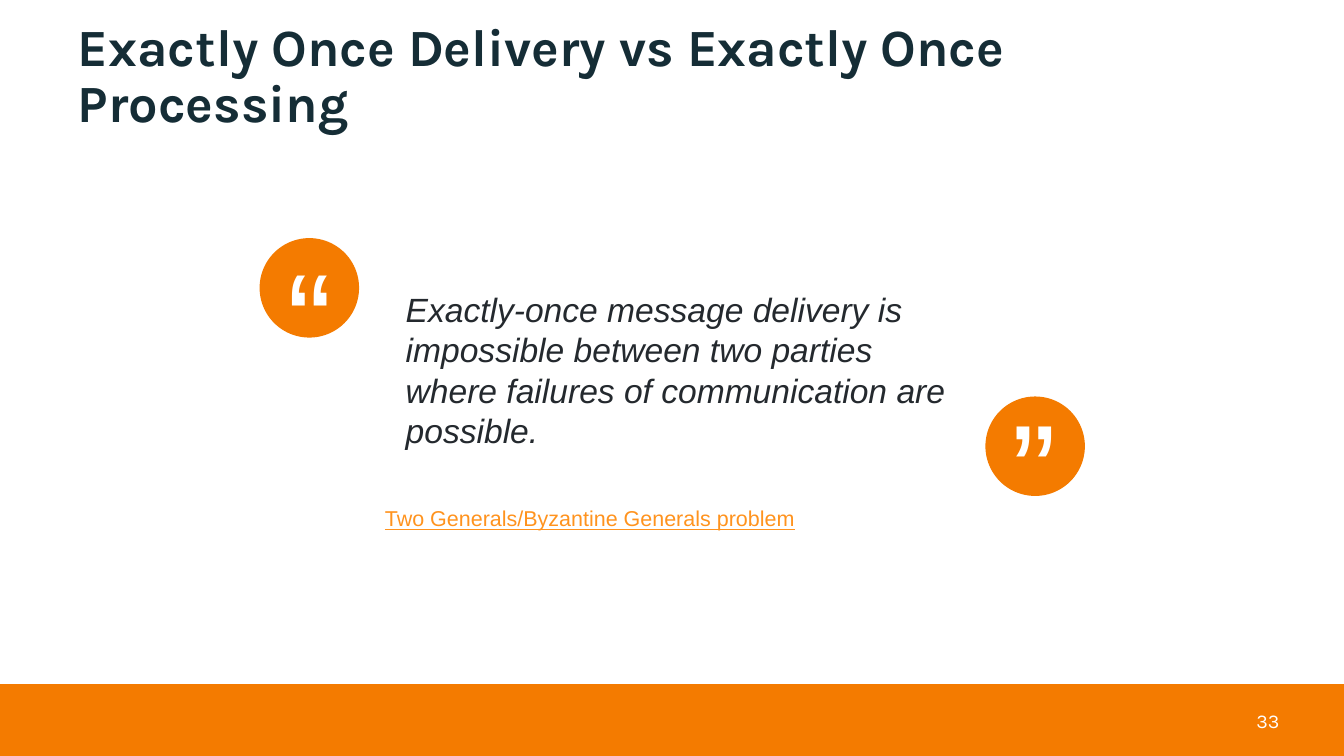
from pptx import Presentation
from pptx.dml.color import RGBColor
from pptx.enum.shapes import MSO_SHAPE
from pptx.enum.text import MSO_ANCHOR, MSO_AUTO_SIZE, PP_ALIGN
from pptx.util import Inches, Pt

COLUMNS, ROWS = 100, 56.25
CELL = Inches(0.1)
ORANGE, WHITE = "F47B00", "FFFFFF"


def color(value):
    return RGBColor.from_string(value)


def grid(*lengths):
    return [round(length * CELL) for length in lengths]


def write(box, text, size, ink, font="Arial", bold=False, italic=False,
          underline=False, align=PP_ALIGN.LEFT, anchor=MSO_ANCHOR.TOP,
          spacing=None, inset=1):
    frame = box.text_frame
    frame.word_wrap = True
    frame.auto_size = MSO_AUTO_SIZE.NONE
    frame.vertical_anchor = anchor
    frame.margin_left, frame.margin_right = grid(inset, inset)
    frame.margin_top, frame.margin_bottom = grid(inset, inset)
    para = frame.paragraphs[0]
    para.alignment = align
    para.line_spacing = spacing
    span = para.add_run()
    span.text = text
    span.font.name, span.font.size = font, Pt(size)
    span.font.bold, span.font.italic, span.font.underline = bold, italic, underline
    span.font.color.rgb = color(ink)


class SlideBuilder:
    """Places elements on a slide, measured in grid columns and rows."""

    def __init__(self, page):
        self.page = page

    def title(self, text, area, **style):
        box = self.page.shapes.title
        box.left, box.top, box.width, box.height = grid(*area)
        write(box, text, **style)

    def shape(self, kind, area, fill, parent=None):
        shape = (parent or self.page).shapes.add_shape(kind, *grid(*area))
        shape.shadow.inherit = False
        shape.fill.solid()
        shape.fill.fore_color.rgb = color(fill)
        shape.line.fill.background()
        return shape

    def text(self, text, area, parent=None, **style):
        box = (parent or self.page).shapes.add_textbox(*grid(*area))
        write(box, text, **style)
        return box

    def quote_badge(self, circle_at, mark_at, rotation=0):
        group = self.page.shapes.add_group_shape()
        circle = self.shape(MSO_SHAPE.OVAL, (*circle_at, 7.4, 7.4), ORANGE, group)
        mark = self.text("“", (*mark_at, 4.7, 9.5), group, size=72, ink=WHITE)
        circle.rotation = mark.rotation = rotation


def main():
    deck = Presentation()
    deck.slide_width, deck.slide_height = grid(COLUMNS, ROWS)
    slide = SlideBuilder(deck.slides.add_slide(deck.slide_layouts[5]))

    # Footer bar and page number
    slide.shape(MSO_SHAPE.RECTANGLE, (0, 50.9, COLUMNS, ROWS - 50.9), ORANGE)
    slide.text("33", (72.7, 52.15, 22.5, 3), size=10.5, ink=WHITE, font="Karla",
               align=PP_ALIGN.RIGHT, anchor=MSO_ANCHOR.MIDDLE, inset=0)

    # Title
    slide.title("Exactly Once Delivery vs Exactly Once Processing",
                (4.8, 2.52, 90.4, 6.5), size=28, ink="152D36", font="Karla",
                bold=True, anchor=MSO_ANCHOR.MIDDLE, spacing=0.9)

    # Quotation between its opening and closing marks
    slide.quote_badge((19.32, 17.72), (20.4, 16.4))
    slide.quote_badge((73.32, 29.5), (74.9, 28.6), rotation=180)
    slide.text("Exactly-once message delivery is impossible between two parties "
               "where failures of communication are possible.",
               (29.2, 20.5, 44.1, 9.5), size=18, ink="24292E", italic=True,
               spacing=Pt(21.6))

    # Reference
    slide.text("Two Generals/Byzantine Generals problem", (27.65, 34.8, 32.8, 7.5),
               size=11.5, ink="FF931E", underline=True, anchor=MSO_ANCHOR.MIDDLE)

    deck.save("out.pptx")


if __name__ == "__main__":
    main()
